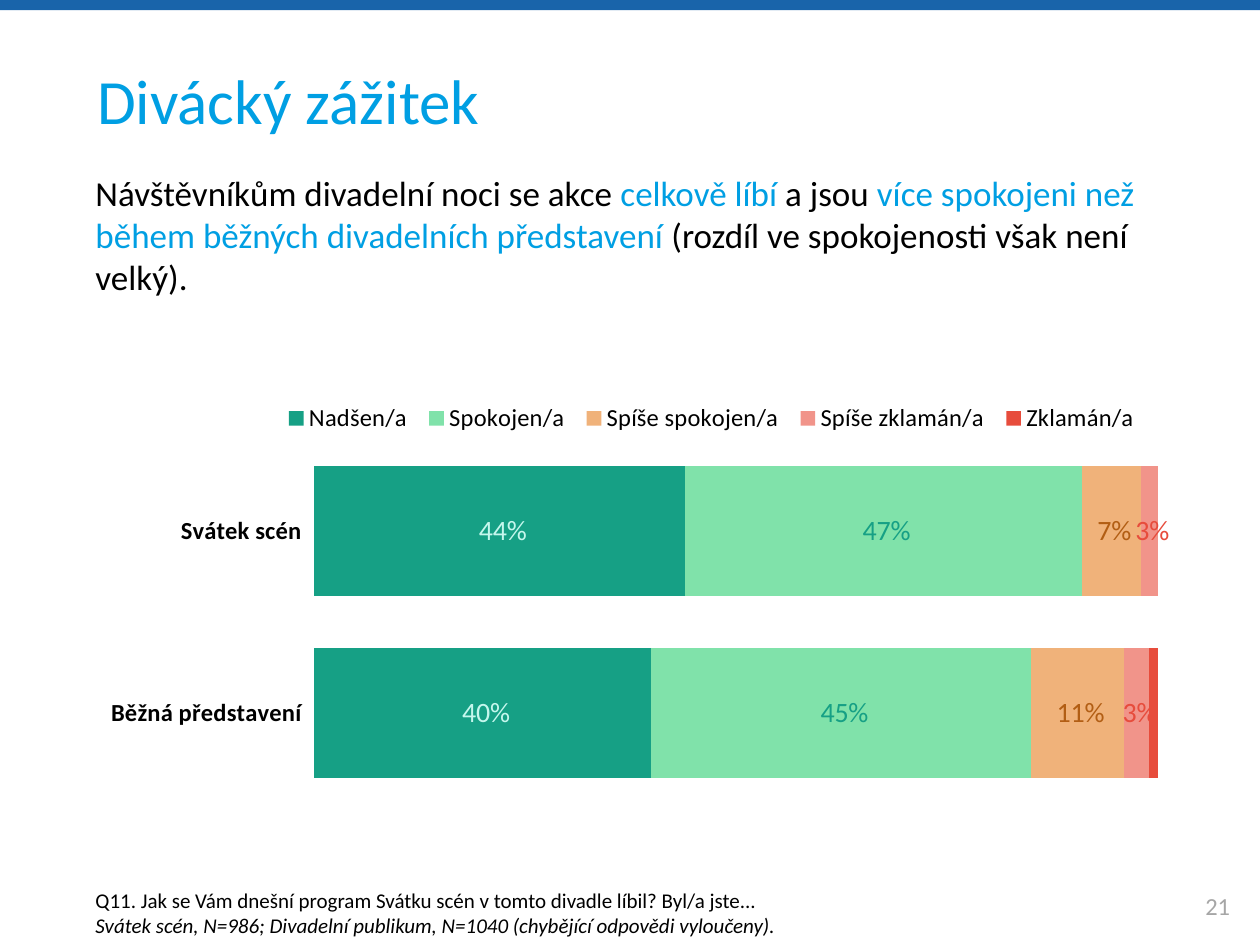
from lxml import etree
from pptx import Presentation
from pptx.chart.data import CategoryChartData
from pptx.dml.color import RGBColor
from pptx.enum.chart import XL_CHART_TYPE, XL_LEGEND_POSITION, XL_TICK_MARK
from pptx.enum.shapes import MSO_SHAPE
from pptx.enum.text import MSO_ANCHOR, MSO_AUTO_SIZE, PP_ALIGN
from pptx.oxml.ns import qn
from pptx.util import Inches, Pt

BAR_STACKED = XL_CHART_TYPE.BAR_STACKED
LEGEND_TOP = XL_LEGEND_POSITION.TOP
TICK_NONE = XL_TICK_MARK.NONE
TICK_OUTSIDE = XL_TICK_MARK.OUTSIDE
RECTANGLE = MSO_SHAPE.RECTANGLE
TOP, MIDDLE, BOTTOM = MSO_ANCHOR.TOP, MSO_ANCHOR.MIDDLE, MSO_ANCHOR.BOTTOM
FIT_NONE, FIT_SHAPE = MSO_AUTO_SIZE.NONE, MSO_AUTO_SIZE.SHAPE_TO_FIT_TEXT
LEFT, CENTER = PP_ALIGN.LEFT, PP_ALIGN.CENTER

BLACK = RGBColor(0x00, 0x00, 0x00)
SKY = RGBColor(0x00, 0x9F, 0xE3)
BLUE = RGBColor(0x19, 0x64, 0xAA)
GREY = RGBColor(0xA6, 0xA6, 0xA6)
TEAL = RGBColor(0x16, 0xA0, 0x85)
MINT = RGBColor(0x80, 0xE2, 0xAA)
PALE_MINT = RGBColor(0xC5, 0xF7, 0xED)
SAND = RGBColor(0xF0, 0xB2, 0x7A)
BROWN = RGBColor(0xB2, 0x5E, 0x14)
SALMON = RGBColor(0xF1, 0x94, 0x8A)
RED = RGBColor(0xE7, 0x4C, 0x3C)

FONT = "Calibri"
CELL = Inches(0.1)
COLUMNS, ROWS = 100, 75
LABEL_FORMAT = r"[>0.015]\ 0%;;"

ANSWERS = [
    ("Nadšen/a", (0.44, 0.40), TEAL, PALE_MINT, 16),
    ("Spokojen/a", (0.47, 0.45), MINT, TEAL, 16),
    ("Spíše spokojen/a", (0.07, 0.11), SAND, BROWN, 16),
    ("Spíše zklamán/a", (0.03, 0.03), SALMON, RED, 16),
    ("Zklamán/a", (0, 0.01), RED, BLACK, 12),
]


def style_font(font, size=12, color=BLACK, bold=False, italic=False):
    font.name, font.size = FONT, Pt(size)
    font.bold, font.italic = bold, italic
    font.color.rgb = color


def write(paragraph, text, **style):
    run = paragraph.add_run()
    run.text = text
    style_font(run.font, **style)


def set_layout(layout, x, y, w, h, inner=False):
    for child in list(layout):
        layout.remove(child)
    manual = etree.SubElement(layout, qn("c:manualLayout"))
    settings = [("layoutTarget", "inner")] if inner else []
    settings += [("xMode", "edge"), ("yMode", "edge"),
                 ("x", x), ("y", y), ("w", w), ("h", h)]
    for tag, value in settings:
        etree.SubElement(manual, qn(f"c:{tag}")).set("val", str(value))


class SlideBuilder:
    def __init__(self, slide):
        self.slide = slide

    def place(self, *cells):
        return [round(cell * CELL) for cell in cells]

    def title(self, text, *cells):
        heading = self.slide.shapes.title
        heading.left, heading.top, heading.width, heading.height = self.place(*cells)
        frame = heading.text_frame
        frame.auto_size, frame.vertical_anchor = FIT_NONE, MIDDLE
        paragraph = frame.paragraphs[0]
        paragraph.alignment, paragraph.line_spacing = LEFT, 0.9
        write(paragraph, text, size=36, color=SKY)

    def band(self, color, *cells):
        strip = self.slide.shapes.add_shape(RECTANGLE, *self.place(*cells))
        strip.shadow.inherit = False
        strip.fill.solid()
        strip.fill.fore_color.rgb = color
        strip.line.fill.background()

    def text(self, paragraphs, *cells, anchor=TOP, align=LEFT, wrap=True, fit=FIT_NONE):
        frame = self.slide.shapes.add_textbox(*self.place(*cells)).text_frame
        frame.word_wrap, frame.vertical_anchor, frame.auto_size = wrap, anchor, fit
        for index, runs in enumerate(paragraphs):
            paragraph = frame.add_paragraph() if index else frame.paragraphs[0]
            paragraph.alignment = align
            for content, style in runs:
                write(paragraph, content, **style)

    def stacked_bars(self, categories, answers, *cells):
        data = CategoryChartData(number_format="0%")
        data.categories = categories
        for name, shares, *_ in answers:
            data.add_series(name, shares)
        chart = self.slide.shapes.add_chart(BAR_STACKED, *self.place(*cells), data).chart
        style_font(chart.font, size=10.5)
        chart.has_title = False
        chart.has_legend = True
        legend = chart.legend
        legend.position, legend.include_in_layout = LEGEND_TOP, False
        style_font(legend.font, size=14)

        plot = chart.plots[0]
        plot.gap_width, plot.overlap, plot.vary_by_categories = 40, 100, False
        for series, (_, _, fill, label_color, label_size) in zip(plot.series, answers):
            series.format.fill.solid()
            series.format.fill.fore_color.rgb = fill
            labels = series.data_labels
            labels.show_value = True
            labels.number_format, labels.number_format_is_linked = LABEL_FORMAT, False
            style_font(labels.font, size=label_size, color=label_color)

        groups, scale = chart.category_axis, chart.value_axis
        groups.reverse_order = True
        groups.major_tick_mark, groups.minor_tick_mark = TICK_OUTSIDE, TICK_NONE
        groups.format.line.fill.background()
        style_font(groups.tick_labels.font, size=14, bold=True)
        scale.minimum_scale, scale.maximum_scale = 0, 1
        scale.has_major_gridlines = False
        scale.visible = False

        plot_area = chart.element.chart.plotArea
        plot_layout = plot_area.find(qn("c:layout"))
        if plot_layout is None:
            plot_layout = etree.Element(qn("c:layout"))
            plot_area.insert(0, plot_layout)
        set_layout(plot_layout, 0.206, 0.135, 0.773, 0.845, inner=True)
        legend_element = chart.element.chart.find(qn("c:legend"))
        legend_layout = legend_element.find(qn("c:layout"))
        if legend_layout is None:
            legend_layout = etree.Element(qn("c:layout"))
            legend_element.find(qn("c:legendPos")).addnext(legend_layout)
        set_layout(legend_layout, 0.17, 0.04, 0.8, 0.09)


def main():
    deck = Presentation()
    deck.slide_width, deck.slide_height = COLUMNS * CELL, ROWS * CELL
    page = SlideBuilder(deck.slides.add_slide(deck.slide_layouts[5]))

    page.band(BLUE, 0, 0, COLUMNS, 0.8)
    page.title("Divácký zážitek", 6.7, 4, 86.6, 8.6)
    page.text([[("21", dict(size=14, color=GREY))]],
              93.3, 69.9, 6.7, 4, anchor=MIDDLE, align=CENTER)
    page.stacked_bars(["Svátek scén", "Běžná představení"], ANSWERS,
                      7.1, 30.3, 86.6, 34.2)
    page.text([
        [("Q11. Jak se Vám dnešní program Svátku scén v tomto divadle líbil? Byl/a jste...", {})],
        [("Svátek scén, N=986; Divadelní publikum, N=1040 (chybějící odpovědi vyloučeny).",
          dict(italic=True))],
    ], 6.6, 69.9, 56.6, 5, anchor=BOTTOM, wrap=False, fit=FIT_SHAPE)

    plain, accent = dict(size=20), dict(size=20, color=SKY)
    page.text([[
        ("Návštěvníkům divadelní noci se akce ", plain),
        ("celkově líbí", accent),
        (" a jsou ", plain),
        ("více spokojeni než během běžných divadelních představení", accent),
        (" (rozdíl ve spokojenosti však není velký).", plain),
    ]], 6.6, 13.1, 87.7, 11.1, fit=FIT_SHAPE)
    deck.save("out.pptx")


if __name__ == "__main__":
    main()
